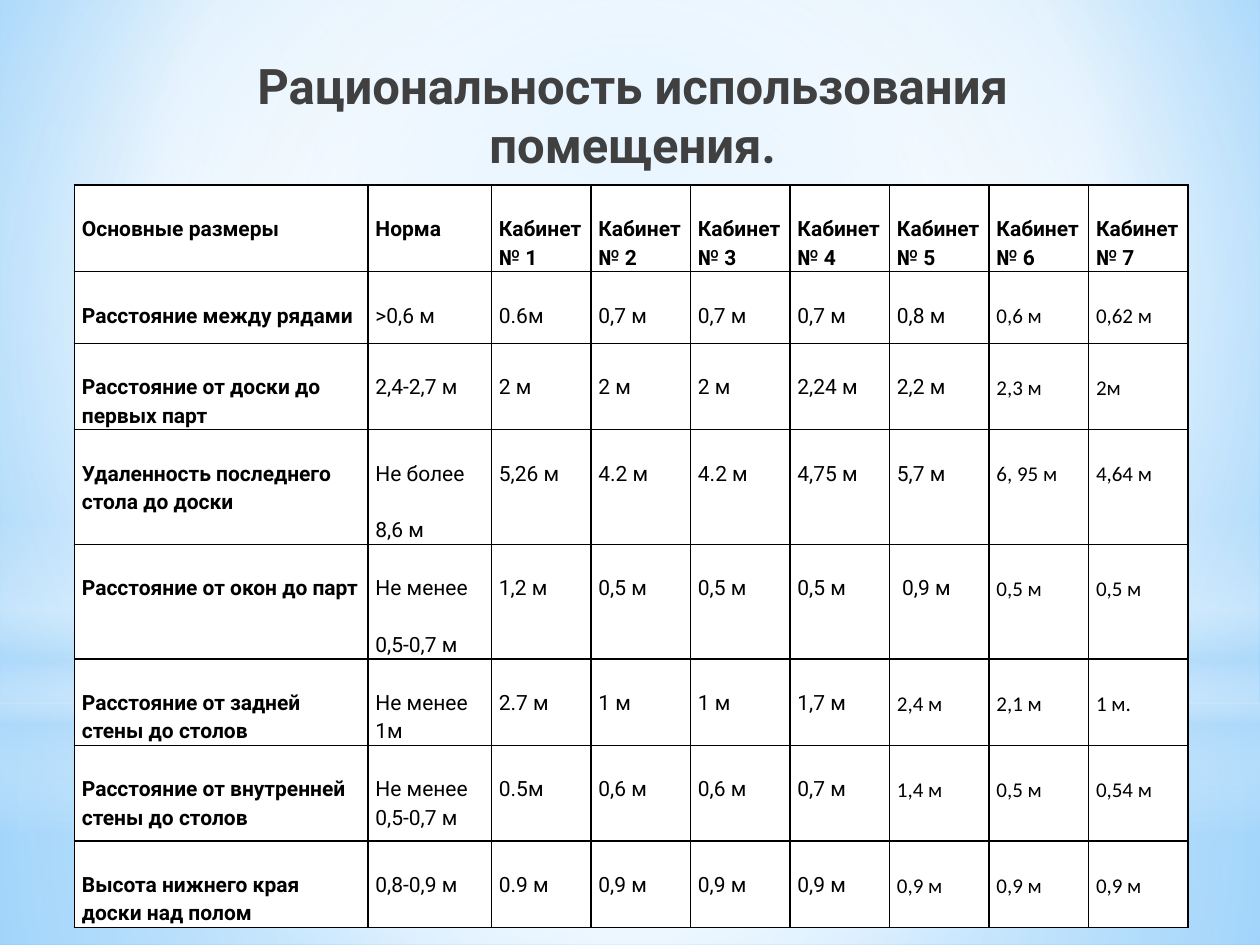
from dataclasses import dataclass
from typing import NamedTuple

from lxml.etree import SubElement as Sub
from pptx import Presentation
from pptx.dml.color import RGBColor as Rgb
from pptx.enum.shapes import MSO_SHAPE as Kind
from pptx.enum.text import MSO_ANCHOR as Anchor, PP_ALIGN as Align
from pptx.oxml.ns import qn
from pptx.util import Inches, Pt

COLS, ROWS = 100, 75
UNIT = Inches(0.1)


class Box(NamedTuple):
    """Place on the slide grid of 100 columns and 75 rows."""
    x: float
    y: float
    w: float
    h: float

    def emu(self) -> list[int]:
        return [round(v * UNIT) for v in self]


class Stop(NamedTuple):
    pos: int
    color: str
    alpha: int = 100


@dataclass(frozen=True)
class Blend:
    """Gradient: round with a focus rectangle, or straight at an angle."""
    stops: tuple[Stop, ...]
    focus: tuple[int, ...] = ()
    angle: int = 90


@dataclass(frozen=True)
class Layer:
    kind: Kind
    box: Box
    blend: Blend


@dataclass(frozen=True)
class Theme:
    white: str = "FFFFFF"
    black: str = "000000"
    sky: str = "B4DCFA"
    gray: str = "404040"
    navy: str = "212745"
    main: str = "Roboto"
    alt: str = "Calibri"
    head: int = 28
    body: int = 12
    line: float = 16.2   # height of one table text line, points
    rule: float = 1      # table border, points


T = Theme()
MID = (50, 50, 50, 50)
BACK = Blend((Stop(0, "9ED5FF"), Stop(60, T.white), Stop(100, "5BB9FF")),
             (20, 10, 20, 60))
INK = Blend((Stop(0, T.black), Stop(40, T.gray), Stop(100, T.navy, 65)))
LAYERS = [
    Layer(Kind.RECTANGLE, Box(0, 55.8, COLS, 19.2), Blend(
        (Stop(0, T.white, 91), Stop(37, T.white, 76), Stop(100, T.sky, 79)), MID)),
    Layer(Kind.RECTANGLE, Box(0, 0, COLS, 55.8), Blend(
        (Stop(0, T.white, 89), Stop(48, T.white, 62), Stop(100, T.sky, 79)), MID)),
    Layer(Kind.RECTANGLE, Box(0, 41.2, COLS, 25), Blend(
        (Stop(0, T.white, 0), Stop(29, T.white, 30), Stop(45, T.sky, 40),
         Stop(55, T.white, 26), Stop(65, T.sky, 60), Stop(100, T.white, 0)))),
    Layer(Kind.OVAL, Box(0, 17.5, COLS, 55.8), Blend(
        (Stop(0, T.white), Stop(56, T.white, 0)), MID)),
]

TITLE = "Рациональность использования помещения."
TITLE_BOX = Box(14.6, 3.6, 71.2, 12.5)
ROOMS = 7
WIDTHS = [23.3, 9.8] + [7.9] * ROOMS
HEIGHTS = [5.1, 5.7, 5.7, 7.6, 7.6, 5.7, 7.6, 5.7]
GRID_BOX = Box(5.9, 14.7, sum(WIDTHS), sum(HEIGHTS))
DATA = [
    ["Основные размеры", "Норма"] + [f"Кабинет № {n + 1}" for n in range(ROOMS)],
    ["Расстояние между рядами", ">0,6 м",
     "0.6м", "0,7 м", "0,7 м", "0,7 м", "0,8 м", "0,6 м", "0,62 м"],
    ["Расстояние от доски до первых парт", "2,4-2,7 м",
     "2 м", "2 м", "2 м", "2,24 м", "2,2 м", "2,3 м", "2м"],
    ["Удаленность последнего стола до доски", "Не более\n8,6 м",
     "5,26 м", "4.2 м", "4.2 м", "4,75 м", "5,7 м", "6, 95 м", "4,64 м"],
    ["Расстояние от окон до парт", "Не менее\n0,5-0,7 м",
     "1,2 м", "0,5 м", "0,5 м", "0,5 м", " 0,9 м", "0,5 м", "0,5 м"],
    ["Расстояние от задней стены до столов", "Не менее 1м",
     "2.7 м", "1 м", "1 м", "1,7 м", "2,4 м", "2,1 м", "1 м."],
    ["Расстояние от внутренней стены до столов", "Не менее 0,5-0,7 м",
     "0.5м", "0,6 м", "0,6 м", "0,7 м", "1,4 м", "0,5 м", "0,54 м"],
    ["Высота нижнего края доски над полом", "0,8-0,9 м",
     "0.9 м", "0,9 м", "0,9 м", "0,9 м", "0,9 м", "0,9 м", "0,9 м"],
]


def apply(obj, **vals) -> None:
    for name, val in vals.items():
        setattr(obj, name, val)


def paint(fill, host, blend: Blend) -> None:
    """Fill the host element with a gradient."""
    fill.solid()
    fill.fore_color.rgb = Rgb.from_string(T.white)
    old = next(host.iter(qn("a:solidFill")))
    grad = old.makeelement(qn("a:gradFill"), {"rotWithShape": "1"})
    stops = Sub(grad, qn("a:gsLst"))
    for stop in blend.stops:
        node = Sub(stops, qn("a:gs"), pos=str(stop.pos * 1000))
        tint = Sub(node, qn("a:srgbClr"), val=stop.color)
        if stop.alpha < 100:
            Sub(tint, qn("a:alpha"), val=str(stop.alpha * 1000))
    if blend.focus:
        way = Sub(grad, qn("a:path"), {"path": "circle"})
        sides = {k: str(v * 1000) for k, v in zip("ltrb", blend.focus)}
        Sub(way, qn("a:fillToRect"), sides)
    else:
        Sub(grad, qn("a:lin"), ang=str(blend.angle * 60000), scaled="0")
    old.getparent().replace(old, grad)


def add_layer(slide, layer: Layer) -> None:
    shape = slide.shapes.add_shape(layer.kind, *layer.box.emu())
    shape.shadow.inherit = False
    shape.line.fill.background()
    paint(shape.fill, shape._element.spPr, layer.blend)


def add_title(slide) -> None:
    frame = slide.shapes.add_textbox(*TITLE_BOX.emu()).text_frame
    apply(frame, word_wrap=True, vertical_anchor=Anchor.TOP,
          margin_top=Inches(0.08))
    para = frame.paragraphs[0]
    para.alignment = Align.CENTER
    run = para.add_run()
    run.text = TITLE
    apply(run.font, name=T.main, size=Pt(T.head), bold=True)
    paint(run.font.fill, run._r, INK)


def edge(cell) -> None:
    """Draw the four borders of a cell."""
    props = cell._tc.get_or_add_tcPr()
    for side in "LRTB":
        line = Sub(props, qn(f"a:ln{side}"), w=str(Pt(T.rule)))
        Sub(Sub(line, qn("a:solidFill")), qn("a:srgbClr"), val=T.black)


def fill_cell(cell, text: str, face: str, bold: bool) -> None:
    edge(cell)
    cell.fill.solid()
    cell.fill.fore_color.rgb = Rgb.from_string(T.white)
    apply(cell, margin_left=Inches(0.06), margin_right=Inches(0.06),
          margin_top=Pt(T.line), margin_bottom=0)
    frame = cell.text_frame
    for i, part in enumerate(text.split("\n")):
        para = frame.add_paragraph() if i else frame.paragraphs[0]
        para.line_spacing = 1.15
        if i:
            para.space_before = Pt(T.line)
        run = para.add_run()
        run.text = part
        apply(run.font, name=face, size=Pt(T.body), bold=bold)
        run.font.color.rgb = Rgb.from_string(T.black)


def add_grid(slide) -> None:
    grid = slide.shapes.add_table(len(DATA), len(WIDTHS), *GRID_BOX.emu()).table
    apply(grid, first_row=False, horz_banding=False)
    for col, wide in zip(grid.columns, WIDTHS):
        col.width = round(wide * UNIT)
    for row, high in zip(grid.rows, HEIGHTS):
        row.height = round(high * UNIT)
    for r, row in enumerate(DATA):
        first = 6 if r >= 5 else 7   # first column set in the second face
        for c, text in enumerate(row):
            face = T.alt if r and c >= first else T.main
            fill_cell(grid.cell(r, c), text, face, r == 0 or c == 0)


def main() -> None:
    deck = Presentation()
    apply(deck, slide_width=COLS * UNIT, slide_height=ROWS * UNIT)
    slide = deck.slides.add_slide(deck.slide_layouts[6])
    paint(slide.background.fill, slide._element, BACK)
    for layer in LAYERS:
        add_layer(slide, layer)
    add_title(slide)
    add_grid(slide)
    deck.save("out.pptx")


if __name__ == "__main__":
    main()
